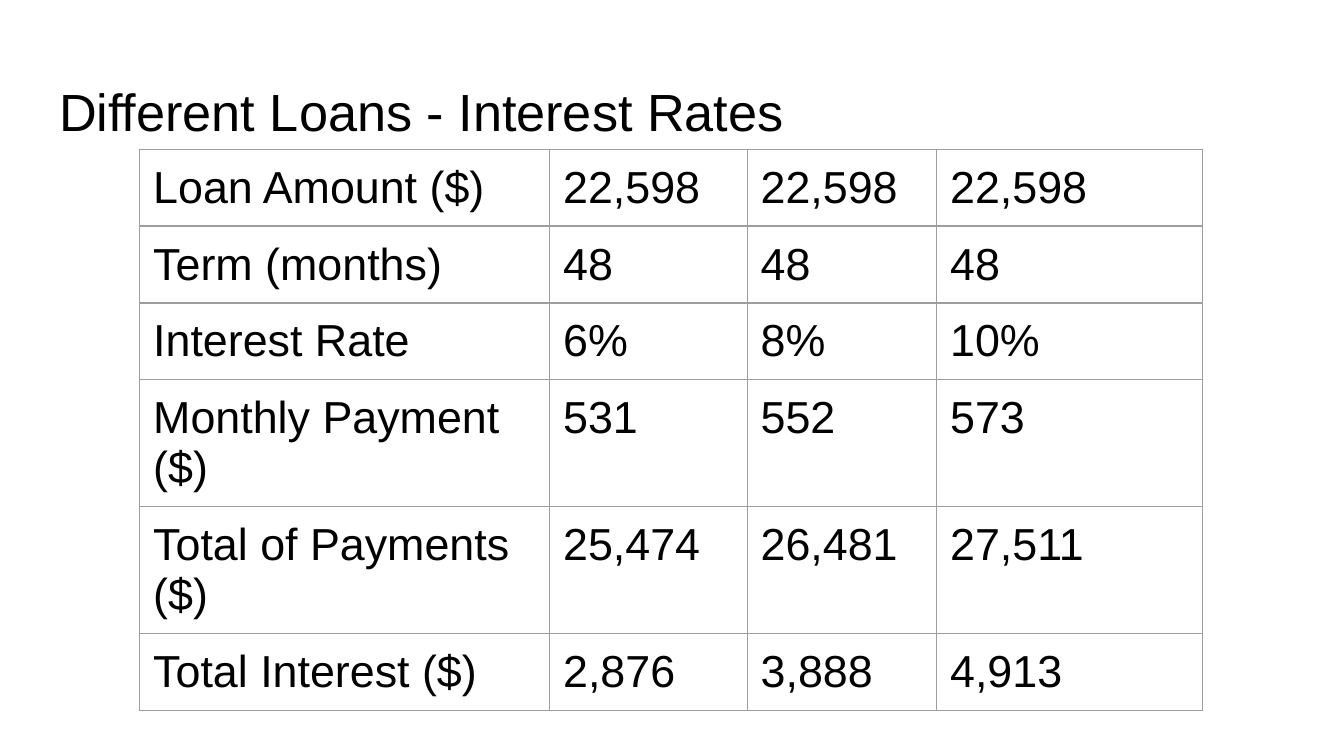
from pptx import Presentation
from pptx.dml.color import RGBColor
from pptx.enum.text import MSO_ANCHOR as Anchor, MSO_AUTO_SIZE as AutoSize, PP_ALIGN as Align
from pptx.oxml.ns import qn
from pptx.util import Inches, Pt
from lxml.etree import SubElement

BLACK = RGBColor(0x00, 0x00, 0x00)
GREY = RGBColor(0x9E, 0x9E, 0x9E)

COLUMN_WIDTHS = [3.05, 1.47, 1.41, 1.98]
ROW_HEIGHT = 0.42
LOANS = [
    ["Loan Amount ($)", "22,598", "22,598", "22,598"],
    ["Term (months)", "48", "48", "48"],
    ["Interest Rate", "6%", "8%", "10%"],
    ["Monthly Payment ($)", "531", "552", "573"],
    ["Total of Payments ($)", "25,474", "26,481", "27,511"],
    ["Total Interest ($)", "2,876", "3,888", "4,913"],
]


class LoanSlide:
    font = "Arial"
    title_size = Pt(28)
    cell_size = Pt(24)
    margin = Inches(0.1)
    border_width = Pt(0.75)

    def __init__(self, deck):
        self.page = deck.slides.add_slide(deck.slide_layouts[5])

    def format_text(self, holder, size):
        holder.margin_left = holder.margin_right = self.margin
        holder.margin_top = holder.margin_bottom = self.margin
        holder.vertical_anchor = Anchor.TOP
        frame = getattr(holder, "text_frame", holder)
        for para in frame.paragraphs:
            para.alignment = Align.LEFT
            for span in para.runs:
                span.font.name = self.font
                span.font.size = size
                span.font.bold = False
                span.font.color.rgb = BLACK

    def title(self, text, left, top, width, height):
        box = self.page.shapes.title
        box.left, box.top = Inches(left), Inches(top)
        box.width, box.height = Inches(width), Inches(height)
        frame = box.text_frame
        frame.text = text
        frame.word_wrap = True
        frame.auto_size = AutoSize.NONE
        self.format_text(frame, self.title_size)

    def border(self, cell):
        properties = cell._tc.get_or_add_tcPr()
        for side in ("a:lnL", "a:lnR", "a:lnT", "a:lnB"):
            line = SubElement(properties, qn(side), w=str(self.border_width))
            fill = SubElement(line, qn("a:solidFill"))
            SubElement(fill, qn("a:srgbClr"), val=str(GREY))

    def table(self, rows, left, top, widths, row_height):
        frame = self.page.shapes.add_table(
            len(rows), len(widths), Inches(left), Inches(top),
            Inches(sum(widths)), Inches(row_height * len(rows)))
        table = frame.table
        table.first_row = False
        table.horz_banding = False
        for column, width in zip(table.columns, widths):
            column.width = Inches(width)
        for row, values in zip(table.rows, rows):
            row.height = Inches(row_height)
            for cell, value in zip(row.cells, values):
                cell.text_frame.text = value
                self.border(cell)
                cell.fill.background()
                self.format_text(cell, self.cell_size)


def main():
    deck = Presentation()
    deck.slide_width = Inches(10)
    deck.slide_height = deck.slide_width * 9 // 16
    slide = LoanSlide(deck)
    slide.title("Different Loans - Interest Rates", 0.34, 0.49, 9.32, 0.63)
    slide.table(LOANS, 1.04, 1.11, COLUMN_WIDTHS, ROW_HEIGHT)
    deck.save("out.pptx")


if __name__ == "__main__":
    main()
